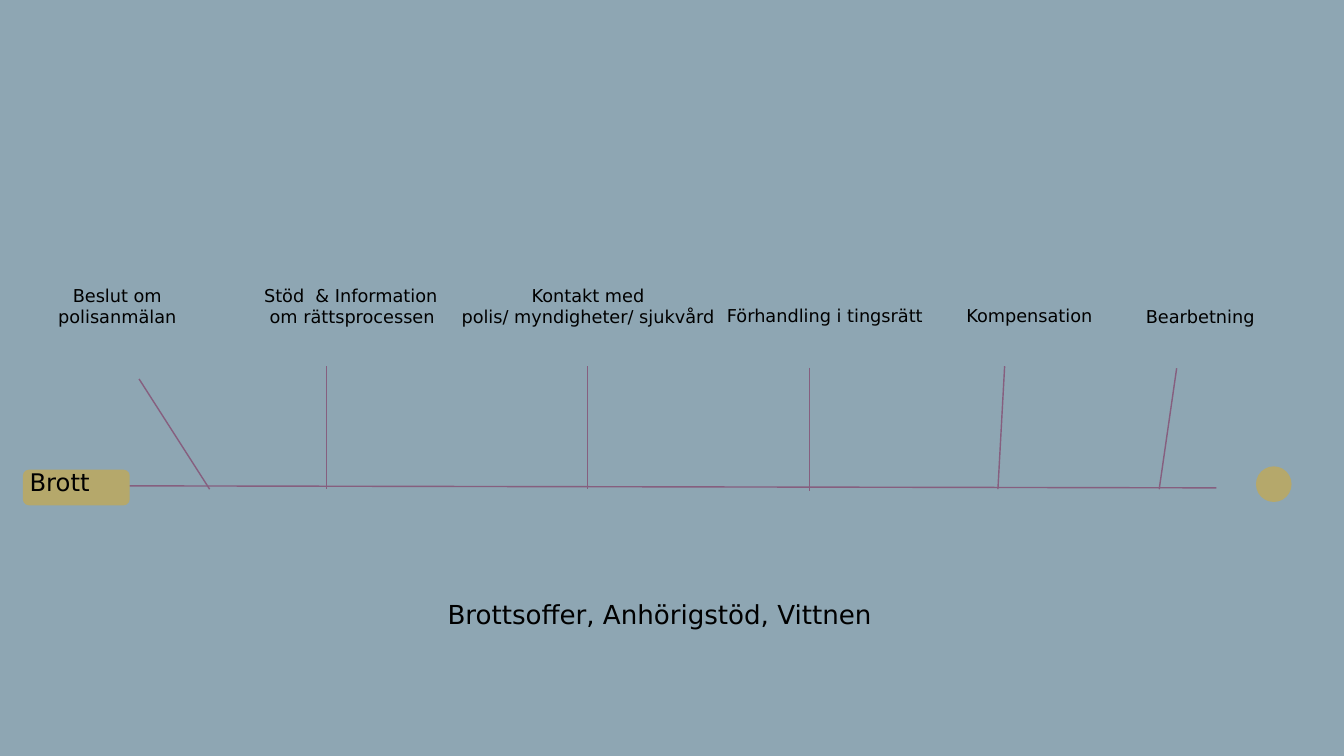
from dataclasses import dataclass

from pptx import Presentation
from pptx.dml.color import RGBColor as Rgb
from pptx.enum.shapes import MSO_CONNECTOR as Link, MSO_SHAPE as Form
from pptx.enum.text import MSO_ANCHOR as Anchor, MSO_AUTO_SIZE as Fit, PP_ALIGN as Align
from pptx.oxml.ns import qn
from pptx.util import Inches, Pt
from lxml.etree import SubElement as sub


@dataclass(frozen=True)
class Theme:
    back: str = "8EA6B3"
    line: str = "865F7F"
    mark: str = "F0AB00"
    ink: str = "000000"
    font: str = "DejaVu Sans"
    label: int = 19
    start: int = 26
    title: int = 28
    weight: float = 1.5
    alpha: int = 40


class Board:
    """Holds the theme and the slide being drawn."""

    def __init__(self, slide, theme):
        self.slide, self.theme = slide, theme
        fill = slide.background.fill
        fill.solid()
        fill.fore_color.rgb = Rgb.from_string(theme.back)

    def line(self, x1, y1, x2, y2):
        line = self.slide.shapes.add_connector(
            Link.STRAIGHT, Inches(x1), Inches(y1), Inches(x2), Inches(y2))
        line.line.color.rgb = Rgb.from_string(self.theme.line)
        line.line.width = Pt(self.theme.weight)
        sub(line._element.spPr, qn("a:effectLst"))

    def mark(self, form, x, y, w, h):
        """Add a see-through shape without outline."""
        mark = self.slide.shapes.add_shape(form, Inches(x), Inches(y), Inches(w), Inches(h))
        mark.shadow.inherit = False
        mark.line.fill.background()
        mark.fill.solid()
        mark.fill.fore_color.rgb = Rgb.from_string(self.theme.mark)
        tint = mark._element.spPr.find(qn("a:solidFill"))[0]
        sub(tint, qn("a:alpha"), val=str(self.theme.alpha * 1000))
        return mark

    def text(self, x, y, w, h, rows, size, align=Align.LEFT):
        box = self.slide.shapes.add_textbox(Inches(x), Inches(y), Inches(w), Inches(h))
        self.fill(box.text_frame, rows, size, align)

    def title(self, x, y, w, h, words):
        box = self.slide.shapes.title
        box.left, box.top, box.width, box.height = map(Inches, (x, y, w, h))
        self.fill(box.text_frame, [words], self.theme.title, Align.LEFT)

    def fill(self, frame, rows, size, align):
        """Set the rows as styled paragraphs in a frame without margins."""
        frame.word_wrap = True
        frame.auto_size = Fit.NONE
        frame.vertical_anchor = Anchor.TOP
        frame.margin_left = frame.margin_right = 0
        frame.margin_top = frame.margin_bottom = 0
        for i, row in enumerate(rows):
            para = frame.add_paragraph() if i else frame.paragraphs[0]
            para.alignment = align
            para.line_spacing = Pt(size * 1.2)
            run = para.add_run()
            run.text = row
            run.font.name = self.theme.font
            run.font.size = Pt(size)
            run.font.color.rgb = Rgb.from_string(self.theme.ink)


# Left, top, width, height, align, rows
STEPS = [
    (0.17, 4.24, 3.15, 0.62, Align.CENTER, ["Beslut om polisanmälan"]),
    (3.93, 4.24, 3.8, 0.62, Align.LEFT, ["Stöd  & Information", " om rättsprocessen"]),
    (6.85, 4.24, 3.8, 0.94, Align.CENTER, ["Kontakt med", "polis/ myndigheter/ sjukvård"]),
    (10.63, 4.54, 3.29, 0.31, Align.CENTER, ["Förhandling i tingsrätt"]),
    (14.38, 4.54, 6.26, 0.31, Align.LEFT, ["Kompensation"]),
    (17.05, 4.55, 2.11, 0.31, Align.LEFT, ["Bearbetning"]),
]
# Top x, top y, foot x, foot y
TICKS = [
    (2.07, 5.64, 3.12, 7.28),
    (4.86, 5.45, 4.86, 7.28),
    (8.74, 5.45, 8.74, 7.28),
    (12.05, 5.47, 12.05, 7.3),
    (14.95, 5.45, 14.85, 7.28),
    (17.51, 5.48, 17.25, 7.28),
]


def main():
    deck = Presentation()
    deck.slide_width, deck.slide_height = Inches(20), Inches(11.25)
    theme = Theme()
    board = Board(deck.slides.add_slide(deck.slide_layouts[5]), theme)

    board.title(6.66, 8.9, 12.52, 0.68, "Brottsoffer, Anhörigstöd, Vittnen")
    board.line(1.93, 7.23, 18.1, 7.26)
    for tick in TICKS:
        board.line(*tick)

    start = board.mark(Form.ROUNDED_RECTANGLE, 0.34, 6.99, 1.59, 0.53)
    start.adjustments[0] = 0.17
    board.text(0.44, 6.95, 3.29, 0.64, ["Brott"], theme.start)
    board.mark(Form.OVAL, 18.69, 6.94, 0.53, 0.53)

    for x, y, w, h, align, rows in STEPS:
        board.text(x, y, w, h, rows, theme.label, align)

    deck.save("out.pptx")


if __name__ == "__main__":
    main()
